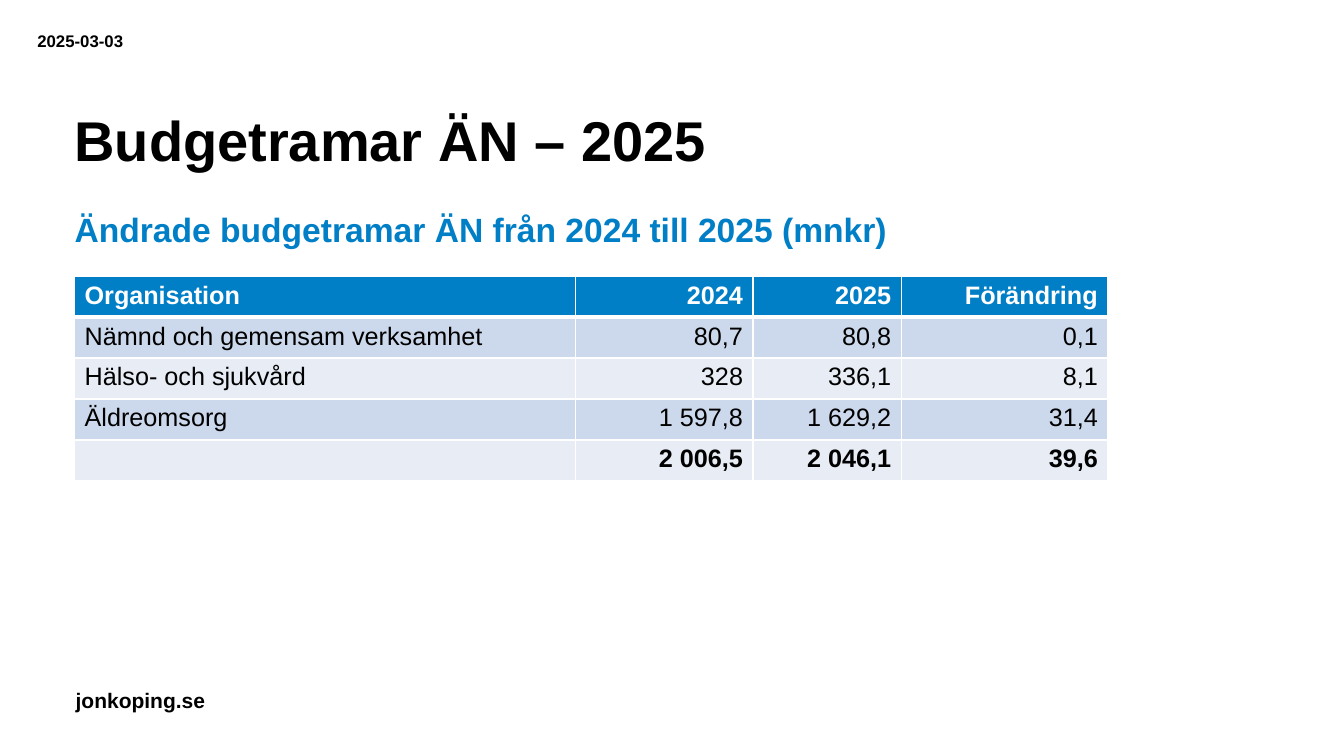
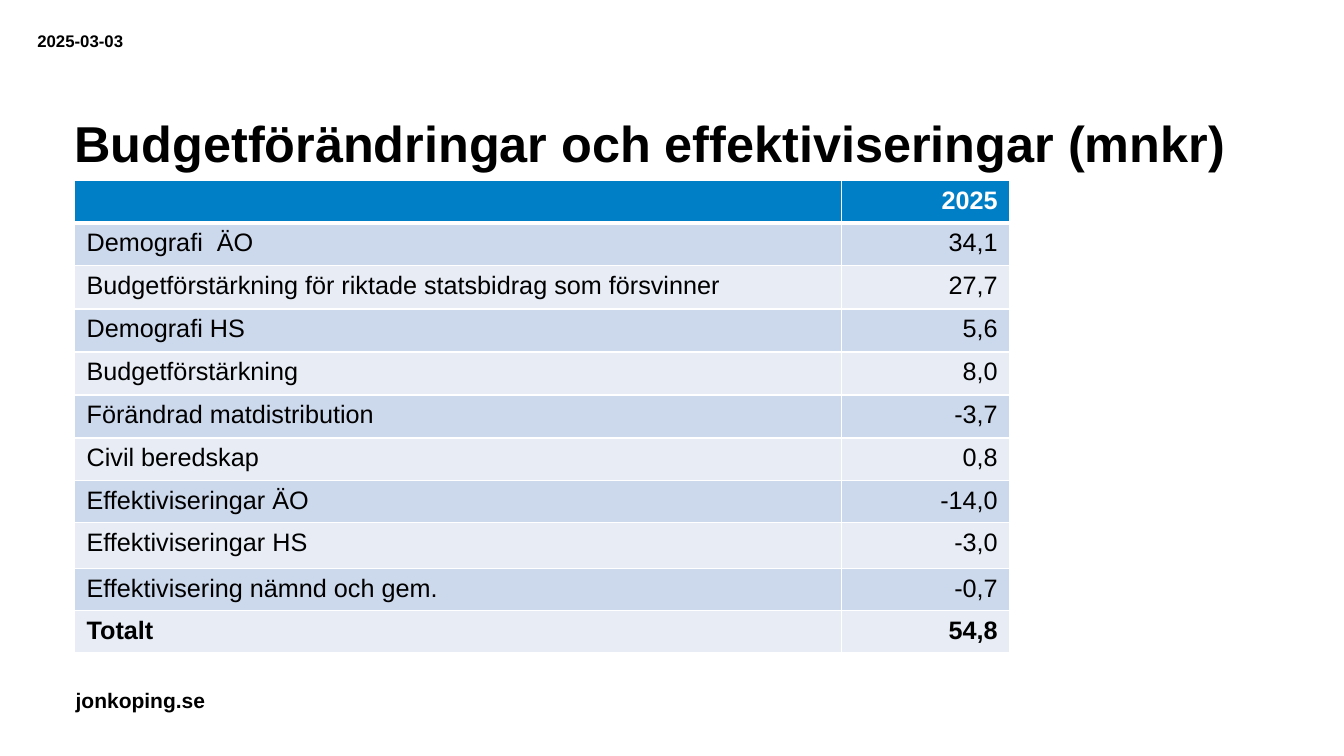
from lxml.etree import SubElement
from pptx import Presentation
from pptx.dml.color import RGBColor
from pptx.enum.text import MSO_ANCHOR, PP_ALIGN
from pptx.oxml.ns import qn
from pptx.util import Inches, Pt


def colour(hex_code):
    return RGBColor.from_string(hex_code)


class Deck:
    FONT = "Arial"
    BLACK, WHITE, BLUE = "000000", "FFFFFF", "007FC7"
    BANDS = ("CCD8EB", "E7ECF5")
    LEFT, WIDTH = 5.55, 88.8
    TITLE_BOTTOM = 22.95

    def __init__(self):
        self.presentation = Presentation()
        self.presentation.slide_width = Inches(13.33)
        self.presentation.slide_height = Inches(7.5)
        self.slide = None

    def across(self, percent):
        return round(self.presentation.slide_width * percent / 100)

    def down(self, percent):
        return round(self.presentation.slide_height * percent / 100)

    def new_slide(self, title, size, top):
        """Start a slide with its title, date and footer; top is the title's upper edge."""
        layout = self.presentation.slide_layouts[6]
        self.slide = self.presentation.slides.add_slide(layout)
        self.text("jonkoping.se", 5.63, 90.93, 9.68, 3.33, 15, wrap=False)
        heading = self.text(title, self.LEFT, top, self.WIDTH, self.TITLE_BOTTOM - top,
                            size, anchor=MSO_ANCHOR.BOTTOM)
        heading.line_spacing = 0.9
        self.text("2025-03-03", 2.78, 4, 7.35, 2.67, 12)

    def subtitle(self, wording):
        self.text(wording, self.LEFT, 28.67, self.WIDTH, 4.27, 24, self.BLUE,
                  MSO_ANCHOR.BOTTOM)

    def text(self, wording, left, top, width, height, size, ink=BLACK,
             anchor=MSO_ANCHOR.TOP, wrap=True):
        box = self.slide.shapes.add_textbox(self.across(left), self.down(top),
                                            self.across(width), self.down(height))
        frame = box.text_frame
        frame.margin_left = frame.margin_right = 0
        frame.margin_top = frame.margin_bottom = 0
        frame.word_wrap = wrap
        frame.vertical_anchor = anchor
        paragraph = frame.paragraphs[0]
        paragraph.text = wording
        self.style(paragraph, size, ink, True)
        return paragraph

    def style(self, paragraph, size, ink, bold):
        font = paragraph.font
        font.name, font.size, font.bold = self.FONT, Pt(size), bold
        font.color.rgb = colour(ink)

    def table(self, rows, top, columns, heights, inset):
        """Draw rows with a header first and a bold total last; inset is (across, down)."""
        grid = self.slide.shapes.add_table(
            len(rows), len(columns), self.across(self.LEFT), self.down(top),
            self.across(sum(columns)), self.down(sum(heights))).table
        grid.first_row = grid.horz_banding = False
        for column, width in zip(grid.columns, columns):
            column.width = self.across(width)
        for row, height in zip(grid.rows, heights):
            row.height = self.down(height)
        for r, values in enumerate(rows):
            header, total = r == 0, r == len(rows) - 1
            for c, value in enumerate(values):
                cell = grid.cell(r, c)
                cell.margin_left = cell.margin_right = self.across(inset[0])
                cell.margin_top = cell.margin_bottom = self.down(inset[1])
                self.borders(cell, top=3 if r == 1 else 1, bottom=3 if header else 1)
                cell.fill.solid()
                cell.fill.fore_color.rgb = colour(
                    self.BLUE if header else self.BANDS[(r - 1) % 2])
                paragraph = cell.text_frame.paragraphs[0]
                paragraph.text = value
                paragraph.alignment = PP_ALIGN.RIGHT if c else PP_ALIGN.LEFT
                self.style(paragraph, 18, self.WHITE if header else self.BLACK,
                           header or total)

    def borders(self, cell, top, bottom):
        properties = cell._tc.get_or_add_tcPr()
        for side, points in (("L", 1), ("R", 1), ("T", top), ("B", bottom)):
            line = SubElement(properties, qn(f"a:ln{side}"), w=str(Pt(points)))
            fill = SubElement(line, qn("a:solidFill"))
            SubElement(fill, qn("a:srgbClr"), val=self.WHITE)


FRAMES = [
    ("Organisation", "2024", "2025", "Förändring"),
    ("Nämnd och gemensam verksamhet", "80,7", "80,8", "0,1"),
    ("Hälso- och sjukvård", "328", "336,1", "8,1"),
    ("Äldreomsorg", "1 597,8", "1 629,2", "31,4"),
    ("", "2 006,5", "2 046,1", "39,6"),
]
CHANGES = [
    ("", "2025"),
    ("Demografi  ÄO", "34,1"),
    ("Budgetförstärkning för riktade statsbidrag som försvinner", "27,7"),
    ("Demografi HS", "5,6"),
    ("Budgetförstärkning", "8,0"),
    ("Förändrad matdistribution", "-3,7"),
    ("Civil beredskap", "0,8"),
    ("Effektiviseringar ÄO", "-14,0"),
    ("Effektiviseringar HS", "-3,0"),
    ("Effektivisering nämnd och gem.", "-0,7"),
    ("Totalt", "54,8"),
]


def main():
    deck = Deck()

    deck.new_slide("Budgetramar ÄN – 2025", size=40, top=6.67)
    deck.subtitle("Ändrade budgetramar ÄN från 2024 till 2025 (mnkr)")
    deck.table(FRAMES, top=36.53, columns=(37.28, 13.2, 11.03, 15.38),
               heights=[5.42] * len(FRAMES), inset=(0.75, 0.67))

    deck.new_slide("Budgetförändringar och effektiviseringar (mnkr)", size=36, top=10.13)
    deck.table(CHANGES, top=23.87, columns=(57.08, 12.5),
               heights=[5.6] + [5.7] * 5 + [5.6] * 2 + [6] + [5.6] * 2,
               inset=(0.9, 0.8))

    deck.presentation.save("out.pptx")


if __name__ == "__main__":
    main()
